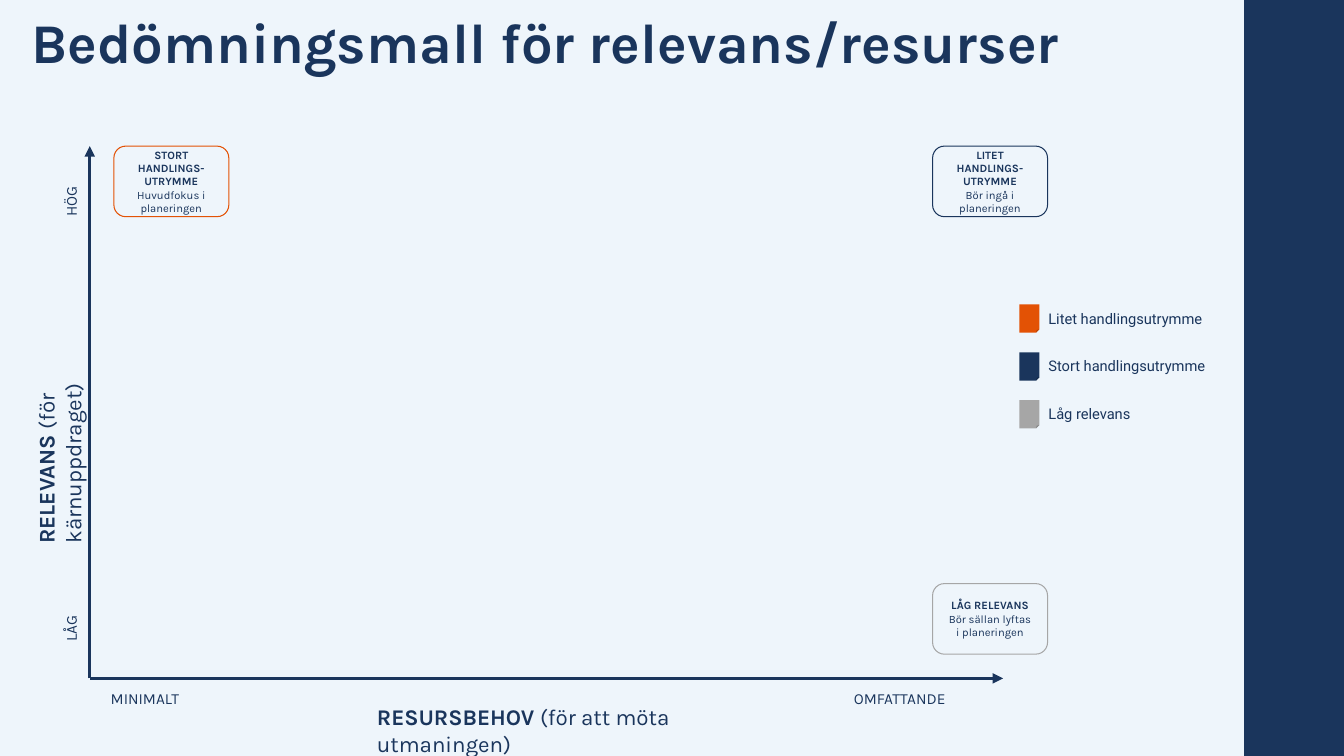
from lxml import etree
from pptx import Presentation
from pptx.dml.color import RGBColor
from pptx.enum.shapes import MSO_CONNECTOR, MSO_SHAPE
from pptx.enum.text import MSO_ANCHOR, PP_ALIGN
from pptx.oxml.ns import qn
from pptx.util import Inches, Pt

RECT = MSO_SHAPE.RECTANGLE
ROUND = MSO_SHAPE.ROUNDED_RECTANGLE
FOLD = MSO_SHAPE.FOLDED_CORNER
LINE = MSO_CONNECTOR.STRAIGHT
TOP, MIDDLE = MSO_ANCHOR.TOP, MSO_ANCHOR.MIDDLE
LEFT, CENTER = PP_ALIGN.LEFT, PP_ALIGN.CENTER

NAVY, ORANGE, GREY, PALE = "1A355C", "E35205", "A6A6A6", "EEF5FB"


def color(code):
    return RGBColor.from_string(code)


def add_run(para, text, size, bold=False, font="Karla"):
    run = para.add_run()
    run.text = text
    run.font.name = font
    run.font.size = Pt(size)
    run.font.bold = bold
    run.font.color.rgb = color(NAVY)


def add_label(slide, box, runs, size, font="Karla", wrap=False, turn=0):
    """Place one line of (text, bold) runs, rotated by turn degrees."""
    label = slide.shapes.add_textbox(*map(Inches, box))
    label.rotation = turn
    frame = label.text_frame
    frame.word_wrap = wrap
    for text, bold in runs:
        add_run(frame.paragraphs[0], text, size, bold, font)


def add_block(slide, kind, box, fill=None, line=None):
    block = slide.shapes.add_shape(kind, *map(Inches, box))
    block.shadow.inherit = False
    if fill:
        block.fill.solid()
        block.fill.fore_color.rgb = color(fill)
    else:
        block.fill.background()
    if line:
        block.line.color.rgb = color(line)
        block.line.width = Pt(0.75)
    else:
        block.line.fill.background()
    return block


def add_title(slide, box, text):
    title = slide.shapes.title
    title.left, title.top, title.width, title.height = map(Inches, box)
    frame = title.text_frame
    frame.word_wrap = True
    frame.vertical_anchor = TOP
    frame.margin_left = frame.margin_right = 0
    frame.margin_top = frame.margin_bottom = 0
    para = frame.paragraphs[0]
    para.alignment = LEFT
    para.line_spacing = 0.9
    add_run(para, text, 40, True)


def add_arrow(slide, start, end):
    arrow = slide.shapes.add_connector(LINE, *map(Inches, start + end))
    arrow.line.color.rgb = color(NAVY)
    arrow.line.width = Pt(2.5)
    line = arrow.line._get_or_add_ln()
    etree.SubElement(line, qn("a:tailEnd"), type="triangle")
    etree.SubElement(arrow._element.spPr, qn("a:effectLst"))


def add_axes(slide, box):
    """Draw both axes from the lower left corner of the box, with labels."""
    left, top, width, height = box
    base = top + height
    add_arrow(slide, (left, base), (left, top))
    add_arrow(slide, (left, base), (left + width, base))

    add_label(slide, (left + 2.75, base + 0.2, 4.37, 0.37),
              [("RESURSBEHOV ", True), ("(för att möta utmaningen)", False)],
              16, wrap=True)
    add_label(slide, (left - 2.08, top + 2.21, 3.29, 0.37),
              [("RELEVANS ", True), ("(för kärnuppdraget)", False)],
              16, wrap=True, turn=270)

    for text, shift, wide in (("MINIMALT", 0.11, 0.9),
                              ("OMFATTANDE", 7.48, 1.21)):
        add_label(slide, (left + shift, base + 0.06, wide, 0.29),
                  [(text, False)], 11)
    for text, drop in (("HÖG", 0.39), ("LÅG", 4.6)):
        add_label(slide, (left - 0.45, top + drop, 0.53, 0.29),
                  [(text, False)], 11, wrap=True, turn=270)


def add_card(slide, left, top, line, head, body):
    card = add_block(slide, ROUND, (left, top, 1.14, 0.7), line=line)
    frame = card.text_frame
    frame.word_wrap = True
    frame.vertical_anchor = MIDDLE
    for para, text, bold in ((frame.paragraphs[0], head, True),
                             (frame.add_paragraph(), body, False)):
        para.alignment = CENTER
        add_run(para, text, 8, bold)


def add_legend(slide, left, top, items):
    for i, (text, fill, wide) in enumerate(items):
        y = top + i * 0.475
        add_block(slide, FOLD, (left, y, 0.2, 0.28), fill=fill)
        add_label(slide, (left + 0.19, y, wide, 0.28),
                  [(text, False)], 10.5, "Roboto")


def main():
    deck = Presentation()
    deck.slide_width, deck.slide_height = Inches(13.33), Inches(7.5)
    slide = deck.slides.add_slide(deck.slide_layouts[5])
    slide.background.fill.solid()
    slide.background.fill.fore_color.rgb = color(PALE)

    add_block(slide, RECT, (12.34, 0, 0.99, 7.5), fill=NAVY)
    add_title(slide, (0.31, 0.15, 11.24, 1.18),
              "Bedömningsmall för relevans/resurser")
    add_axes(slide, (0.89, 1.45, 9.06, 5.28))
    add_card(slide, 1.13, 1.45, ORANGE,
             "STORT HANDLINGS-UTRYMME", "Huvudfokus i planeringen")
    add_card(slide, 9.25, 1.45, NAVY,
             "LITET HANDLINGS-UTRYMME", "Bör ingå i planeringen")
    add_card(slide, 9.25, 5.79, GREY,
             "LÅG RELEVANS", "Bör sällan lyftas i planeringen")
    add_legend(slide, 10.11, 3.02, [
        ("Litet handlingsutrymme", ORANGE, 1.73),
        ("Stort handlingsutrymme", NAVY, 1.76),
        ("Låg relevans", GREY, 1.01),
    ])
    deck.save("out.pptx")


if __name__ == "__main__":
    main()
